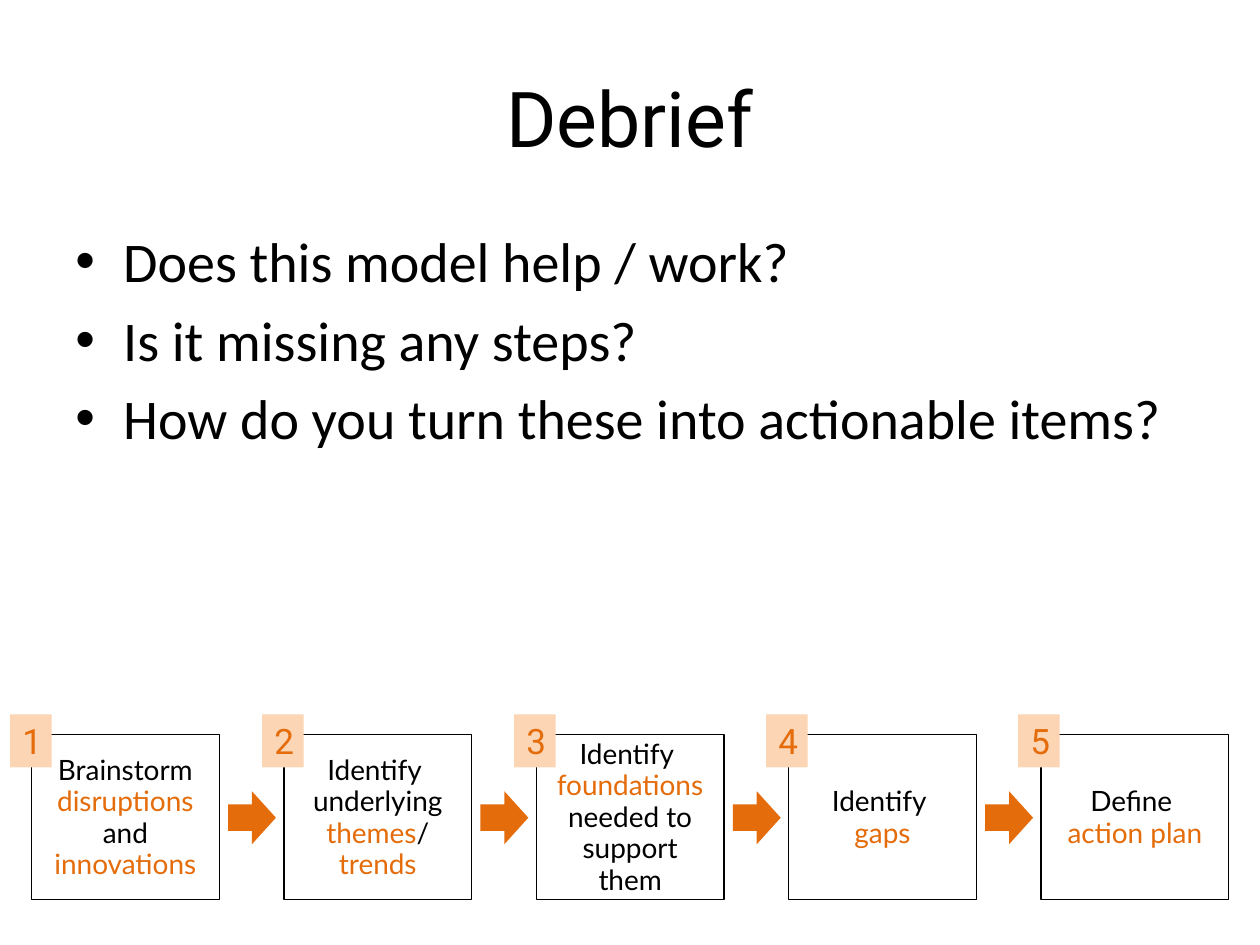
from lxml.etree import SubElement
from pptx import Presentation
from pptx.dml.color import RGBColor
from pptx.enum.shapes import MSO_SHAPE
from pptx.enum.text import MSO_ANCHOR, PP_ALIGN
from pptx.oxml.ns import qn
from pptx.util import Inches, Pt

INK = {"black": "000000", "white": "FFFFFF", "orange": "E46C0A", "peach": "FCD5B5"}


def style(para, face, size, ink, align=PP_ALIGN.CENTER):
    para.alignment = align
    para.font.name = face
    para.font.size = Pt(size)
    para.font.color.rgb = RGBColor.from_string(INK[ink])


def block(kind, left, top, width, height, fill):
    shape = slide.shapes.add_shape(
        kind, Inches(left), Inches(top), Inches(width), Inches(height))
    shape.shadow.inherit = False
    shape.fill.solid()
    shape.fill.fore_color.rgb = RGBColor.from_string(INK[fill])
    shape.line.fill.background()
    shape.text_frame.vertical_anchor = MSO_ANCHOR.MIDDLE
    return shape


deck = Presentation()
deck.slide_width, deck.slide_height = Inches(10), Inches(7.5)
slide = deck.slides.add_slide(deck.slide_layouts[6])

title = slide.shapes.add_textbox(Inches(0.5), Inches(0.3), Inches(9), Inches(1.25))
frame = title.text_frame
frame.word_wrap = True
frame.vertical_anchor = MSO_ANCHOR.MIDDLE
frame.text = "Debrief"
style(frame.paragraphs[0], "Roboto", 44, "black")

asks = [
    "Does this model help / work?",
    "Is it missing any steps?",
    "How do you turn these into actionable items?",
]
body = slide.shapes.add_textbox(Inches(0.5), Inches(1.75), Inches(9), Inches(4.95))
frame = body.text_frame
frame.word_wrap = True
frame.text = "\n".join(asks)
for para in frame.paragraphs:
    style(para, "Calibri", 32, "black", PP_ALIGN.LEFT)
    para.space_before = Pt(6.4)
    props = para._p.get_or_add_pPr()
    props.set("marL", str(Inches(0.38)))
    props.set("indent", str(-Inches(0.38)))
    SubElement(props, qn("a:buFont"), typeface="Arial")
    SubElement(props, qn("a:buChar"), char="•")

steps = [
    ["Brainstorm ", "disruptions", " and ", "innovations"],
    ["Identify \nunderlying", " themes", "/ ", "trends"],
    ["Identify \n", "foundations", " needed to support them"],
    ["Identify \n", "gaps"],
    ["Define \n", "action plan"],
]
pitch = 2.003
for col, parts in enumerate(steps):
    left = 0.25 + col * pitch
    box = block(MSO_SHAPE.RECTANGLE, left, 5.83, 1.49, 1.31, "white")
    box.line.color.rgb = RGBColor.from_string(INK["black"])
    box.line.width = Pt(0.75)
    para = box.text_frame.paragraphs[0]
    style(para, "Lato", 16, "black")
    para.line_spacing = Pt(18)
    for turn, part in enumerate(parts):
        for row, words in enumerate(part.split("\n")):
            if row:
                para.add_line_break()
            if words:
                run = para.add_run()
                run.text = words
                if turn % 2:
                    run.font.color.rgb = RGBColor.from_string(INK["orange"])
    if col < len(steps) - 1:
        block(MSO_SHAPE.RIGHT_ARROW, left + 1.56, 6.28, 0.38, 0.42, "orange")

for col in range(len(steps)):
    tag = block(MSO_SHAPE.RECTANGLE, 0.08 + col * 2, 5.67, 0.33, 0.42, "peach")
    tag.text_frame.text = str(col + 1)
    style(tag.text_frame.paragraphs[0], "Roboto", 20, "orange")

deck.save("out.pptx")
